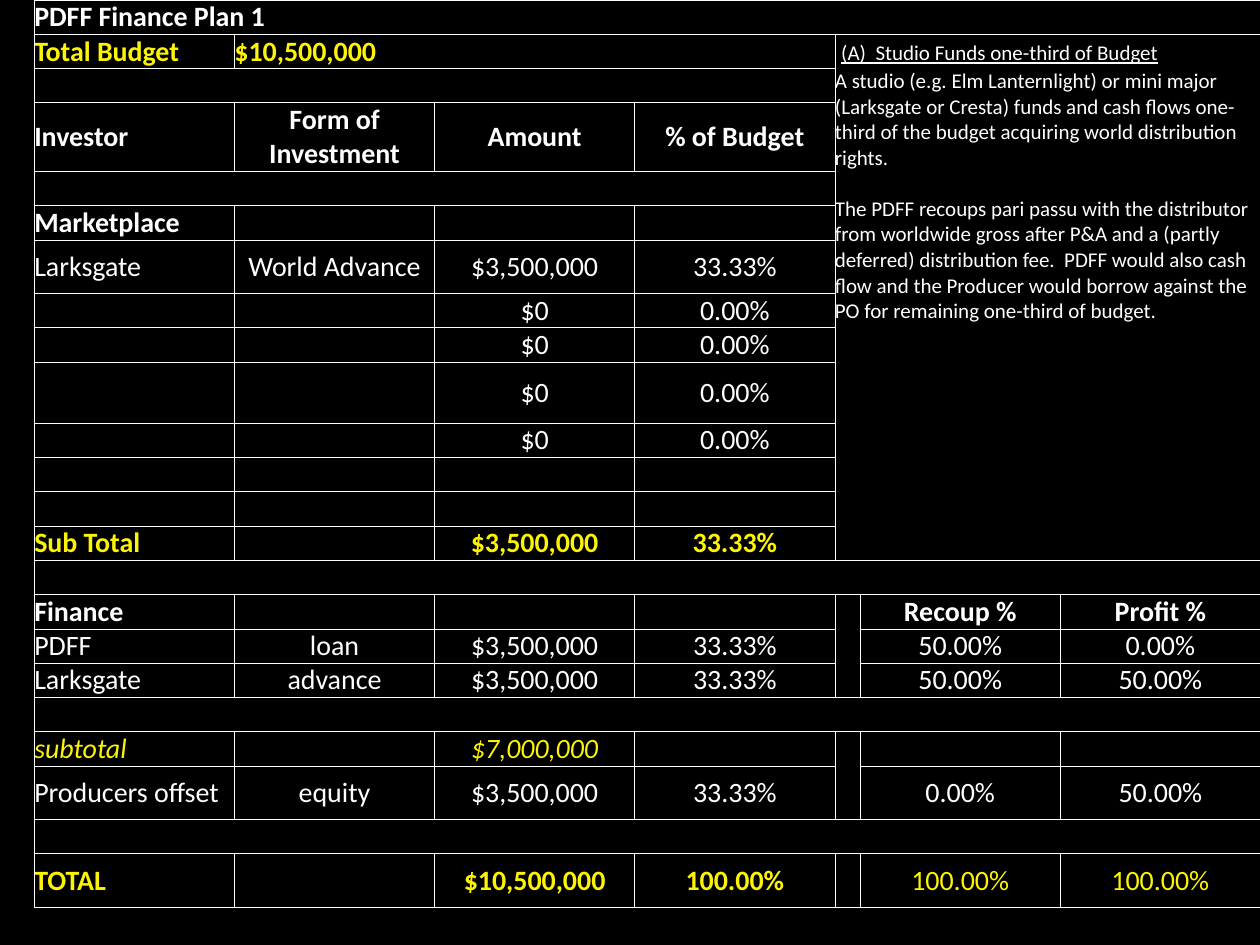
from dataclasses import dataclass

from lxml import etree
from pptx import Presentation
from pptx.dml.color import RGBColor
from pptx.enum.text import MSO_ANCHOR, PP_ALIGN
from pptx.oxml.ns import qn
from pptx.table import Table, _Cell
from pptx.util import Pt

LEFT, CENTER = PP_ALIGN.LEFT, PP_ALIGN.CENTER
TOP, MIDDLE = MSO_ANCHOR.TOP, MSO_ANCHOR.MIDDLE


@dataclass(frozen=True)
class Theme:
    font: str = "Calibri"
    background: RGBColor = RGBColor(0, 0, 0)
    text: RGBColor = RGBColor(0xFF, 0xFF, 0xFF)
    accent: RGBColor = RGBColor(0xFC, 0xF3, 0x05)
    line: str = "FFFFFF"
    line_width: float = 0.5
    table_size: float = 16
    note_size: float = 12


@dataclass(frozen=True)
class Look:
    accent: bool = False
    bold: bool = False
    italic: bool = False


@dataclass(frozen=True)
class PlanRow:
    texts: tuple[str, ...] = ()
    look: Look = Look()
    height: float = 19.6
    centered: bool = True


@dataclass(frozen=True)
class Span:
    row: int
    column: int
    last_row: int
    last_column: int


THEME = Theme()
PLAIN = Look()
HEADING = Look(bold=True)
TOTAL = Look(accent=True, bold=True)
SUBTOTAL = Look(accent=True, italic=True)
ACCENT = Look(accent=True)

TALL = 30.6
COLUMN_WIDTHS = [114.4] * 4 + [14.4] + [114.4] * 2
THIRD = ("$3,500,000", "33.33%")
NOTHING = ("", "", "$0", "0.00%")

PLAN = [
    PlanRow(("PDFF Finance Plan 1",), HEADING),
    PlanRow(("Total Budget", "$10,500,000"), TOTAL, centered=False),
    PlanRow(),
    PlanRow(("Investor", "Form of Investment", "Amount", "% of Budget"), HEADING, 39.2),
    PlanRow(),
    PlanRow(("Marketplace",), HEADING),
    PlanRow(("Larksgate", "World Advance", *THIRD), height=TALL),
    PlanRow(NOTHING),
    PlanRow(NOTHING),
    PlanRow(NOTHING, height=35),
    PlanRow(NOTHING),
    PlanRow(),
    PlanRow(),
    PlanRow(("Sub Total", "", *THIRD), TOTAL),
    PlanRow(),
    PlanRow(("Finance", "", "", "", "", "Recoup %", "Profit %"), HEADING),
    PlanRow(("PDFF", "loan", *THIRD, "", "50.00%", "0.00%")),
    PlanRow(("Larksgate", "advance", *THIRD, "", "50.00%", "50.00%")),
    PlanRow(),
    PlanRow(("subtotal", "", "$7,000,000"), SUBTOTAL),
    PlanRow(("Producers offset", "equity", *THIRD, "", "0.00%", "50.00%"), height=TALL),
    PlanRow(),
    PlanRow(("TOTAL", "", "$10,500,000", "100.00%", "", "100.00%", "100.00%"), TOTAL, TALL),
]

SPANS = [
    *(Span(row, 0, row, 6) for row in (0, 14, 18, 21)),
    *(Span(row, 0, row, 3) for row in (2, 4)),
    Span(1, 1, 1, 3),
    Span(1, 4, 13, 6),
    Span(15, 4, 17, 4),
    Span(19, 4, 20, 4),
]

NOTE_TITLE = "(A)  Studio Funds one-third of Budget"
NOTE_PARAGRAPHS = [
    "A studio (e.g. Elm Lanternlight) or mini major (Larksgate or Cresta) funds and cash "
    "flows one-third of the budget acquiring world distribution rights.",
    "The PDFF recoups pari passu with the distributor from worldwide gross after P&A and a "
    "(partly deferred) distribution fee.  PDFF would also cash flow and the Producer would "
    "borrow against the PO for remaining one-third of budget.",
]
NOTE_GAP = 14.6


def style_font(font, look: Look, size: float) -> None:
    font.name = THEME.font
    font.size = Pt(size)
    font.bold = look.bold
    font.italic = look.italic
    font.color.rgb = THEME.accent if look.accent else THEME.text


def frame_cell(cell: _Cell) -> None:
    cell.margin_left = cell.margin_right = cell.margin_top = cell.margin_bottom = 0
    cell.vertical_anchor = MIDDLE
    properties = cell._tc.get_or_add_tcPr()
    for side in ("a:lnL", "a:lnR", "a:lnT", "a:lnB"):
        line = etree.SubElement(properties, qn(side), w=str(Pt(THEME.line_width)))
        fill = etree.SubElement(line, qn("a:solidFill"))
        etree.SubElement(fill, qn("a:srgbClr"), val=THEME.line)
    cell.fill.solid()
    cell.fill.fore_color.rgb = THEME.background


def write_cell(cell: _Cell, text: str, look: Look, alignment: PP_ALIGN) -> None:
    paragraph = cell.text_frame.paragraphs[0]
    paragraph.alignment = alignment
    style_font(paragraph.font, look, THEME.table_size)
    if text:
        paragraph.add_run().text = text
    else:
        size = str(int(THEME.table_size * 100))
        etree.SubElement(paragraph._p, qn("a:endParaRPr"), sz=size)


def write_note(cell: _Cell) -> None:
    cell.vertical_anchor = TOP
    frame = cell.text_frame
    frame.clear()
    heading = frame.paragraphs[0]
    heading.alignment = LEFT
    for text, look, size in (
        (" ", HEADING, THEME.table_size),
        (NOTE_TITLE, PLAIN, THEME.note_size),
    ):
        run = heading.add_run()
        run.text = text
        style_font(run.font, look, size)
        run.font.underline = text == NOTE_TITLE
    for index, text in enumerate(NOTE_PARAGRAPHS):
        paragraph = frame.add_paragraph()
        paragraph.space_before = Pt(NOTE_GAP * index)
        style_font(paragraph.font, PLAIN, THEME.note_size)
        paragraph.add_run().text = text


def fill_table(table: Table) -> None:
    table.first_row = table.horz_banding = False
    for column, width in zip(table.columns, COLUMN_WIDTHS):
        column.width = Pt(width)
    for row_index, plan_row in enumerate(PLAN):
        table.rows[row_index].height = Pt(plan_row.height)
        for column_index in range(len(COLUMN_WIDTHS)):
            cell = table.cell(row_index, column_index)
            has_text = column_index < len(plan_row.texts)
            text = plan_row.texts[column_index] if has_text else ""
            alignment = CENTER if column_index and plan_row.centered else LEFT
            look = ACCENT if plan_row.look == TOTAL and column_index > 4 else plan_row.look
            frame_cell(cell)
            write_cell(cell, text, look, alignment)
    for span in SPANS:
        table.cell(span.row, span.column).merge(table.cell(span.last_row, span.last_column))
    write_note(table.cell(1, 4))


def main() -> None:
    presentation = Presentation()
    presentation.slide_width, presentation.slide_height = Pt(720), Pt(540)
    slide = presentation.slides.add_slide(presentation.slide_layouts[6])
    slide.background.fill.solid()
    slide.background.fill.fore_color.rgb = THEME.background
    shape = slide.shapes.add_table(
        len(PLAN), len(COLUMN_WIDTHS), Pt(19.6), Pt(0),
        Pt(sum(COLUMN_WIDTHS)), Pt(sum(row.height for row in PLAN)),
    )
    fill_table(shape.table)
    presentation.save("out.pptx")


if __name__ == "__main__":
    main()
